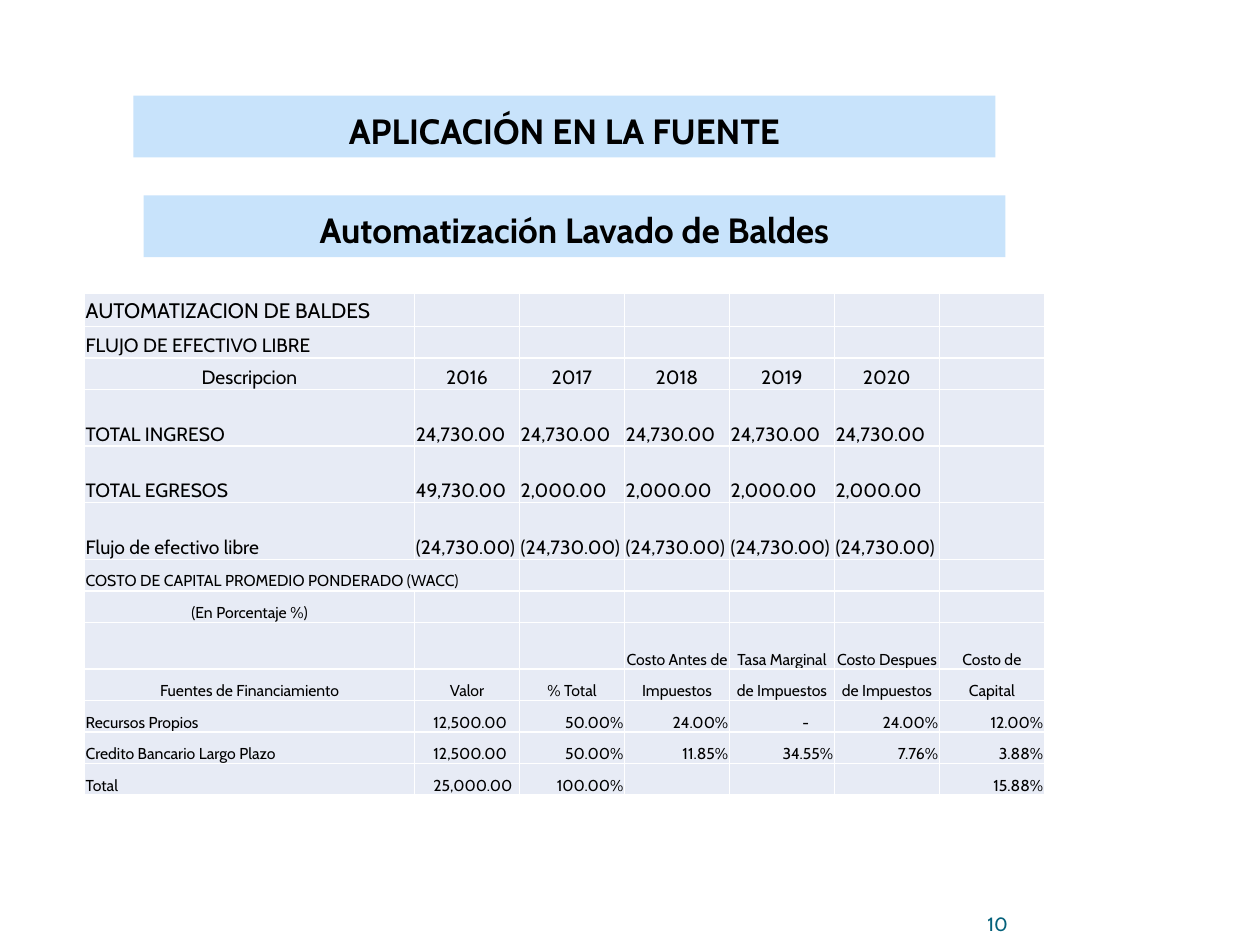
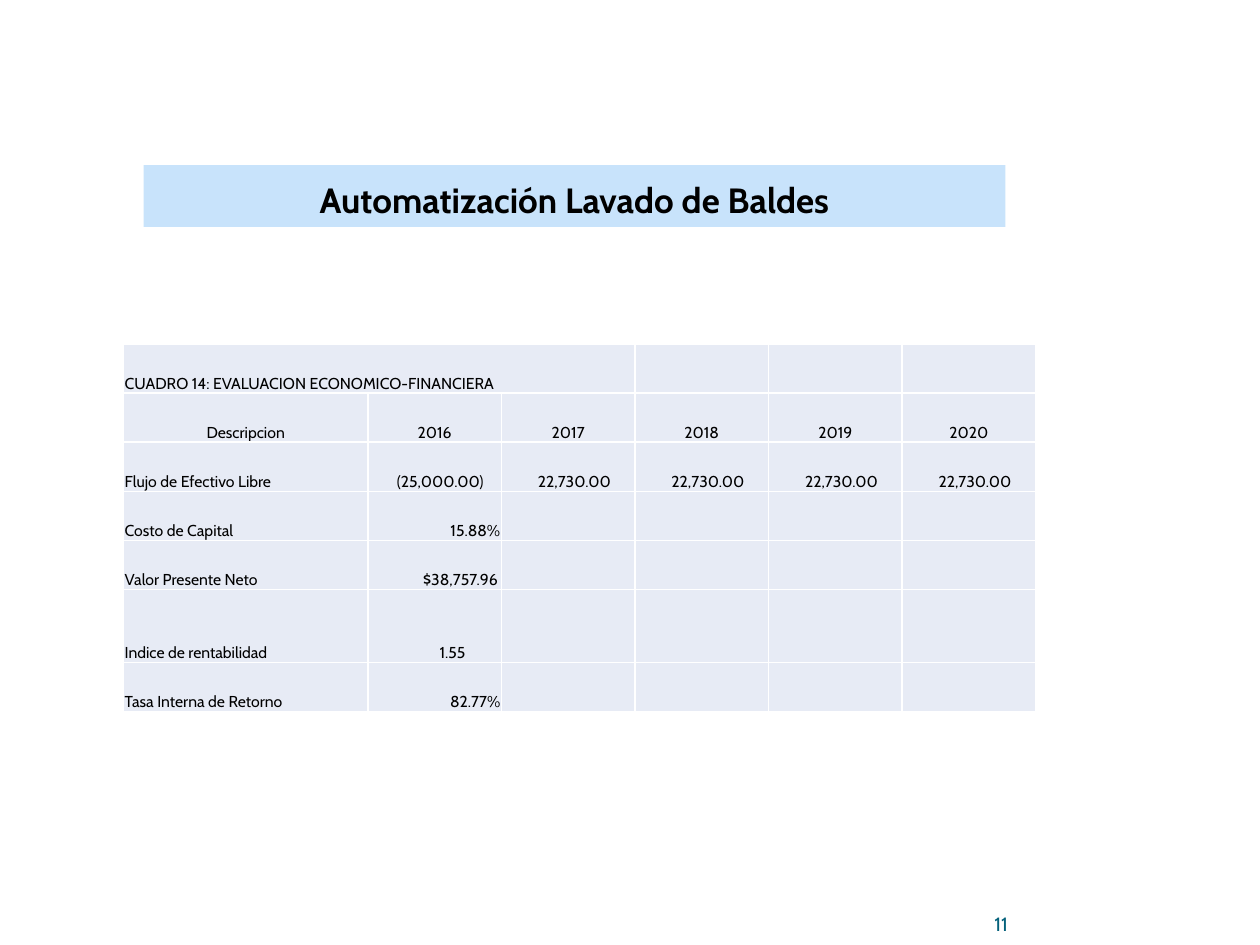
from dataclasses import dataclass

from lxml import etree
from pptx import Presentation, util as u
from pptx.dml.color import RGBColor
from pptx.enum import shapes, text
from pptx.oxml import ns

BAND_TITLE = "Automatización Lavado de Baldes"
YEARS = ["2016", "2017", "2018", "2019", "2020"]

FLOW_ROWS = [
    (0.26, "heading", "left", ["AUTOMATIZACION DE BALDES"]),
    (0.25, "body", "left", ["FLUJO DE EFECTIVO LIBRE"]),
    (0.25, "body", "center", ["Descripcion", *YEARS]),
    (0.45, "body", "left", ["TOTAL INGRESO"] + ["24,730.00"] * 5),
    (0.45, "body", "left", ["TOTAL EGRESOS", "49,730.00"] + ["2,000.00"] * 4),
    (0.45, "body", "left", ["Flujo de efectivo libre"] + ["(24,730.00)"] * 5),
    (0.25, "small", "left", ["COSTO DE CAPITAL PROMEDIO PONDERADO (WACC)"]),
    (0.25, "small", "center", ["(En Porcentaje %)"]),
    (0.37, "small", "center",
     ["", "", "", "Costo Antes de", "Tasa Marginal", "Costo Despues", "Costo de"]),
    (0.25, "small", "center",
     ["Fuentes de Financiamiento", "Valor", "% Total", "Impuestos",
      "de Impuestos", "de Impuestos", "Capital"]),
    (0.25, "small", "left",
     ["Recursos Propios", "12,500.00", "50.00%", "24.00%", "-", "24.00%", "12.00%"]),
    (0.25, "small", "left",
     ["Credito Bancario Largo Plazo", "12,500.00", "50.00%", "11.85%",
      "34.55%", "7.76%", "3.88%"]),
    (0.25, "small", "left",
     ["Total", "25,000.00", "100.00%", "", "", "", "15.88%"]),
]

EVALUATION_ROWS = [
    (0.39, "small", "left", ["CUADRO 14: EVALUACION ECONOMICO-FINANCIERA"]),
    (0.39, "small", "center", ["Descripcion", *YEARS]),
    (0.39, "small", "left",
     ["Flujo de Efectivo Libre", "(25,000.00)"] + ["22,730.00"] * 4),
    (0.39, "small", "left", ["Costo de Capital", "15.88%"]),
    (0.39, "small", "left", ["Valor Presente Neto", "$38,757.96"]),
    (0.58, "small", "left", ["Indice de rentabilidad", "1.55"]),
    (0.39, "small", "left", ["Tasa Interna de Retorno", "82.77%"]),
]

PAGES = [
    {
        "number": "10",
        "bands": [(1.14, 1.55, BAND_TITLE), (1.06, 0.76, "APLICACIÓN EN LA FUENTE")],
        "table": {
            "place": (0.67, 2.33, 7.62), "label_width": 2.62, "columns": 7,
            "rows": FLOW_ROWS, "merge": (6, 1),
            "indents": {"12,500.00": 0.15, "25,000.00": 0.15, "-": 0.58},
        },
    },
    {
        "number": "11",
        "bands": [(1.14, 1.31, BAND_TITLE)],
        "table": {
            "place": (0.98, 2.73, 7.24), "label_width": 1.94, "columns": 6,
            "rows": EVALUATION_ROWS, "merge": (0, 2),
            "indents": {"(25,000.00)": 0.23, "22,730.00": 0.29, "1.55": 0.57},
        },
    },
]


@dataclass(frozen=True)
class Theme:
    font: str = "Cabin"
    ink: str = "000000"
    number: str = "04617B"
    band: str = "C8E3FB"
    cell: str = "E7EBF5"
    rule: str = "FFFFFF"
    title: int = 20
    heading: int = 12
    body: int = 11
    small: int = 9


THEME = Theme()
ALIGN = {
    "left": text.PP_ALIGN.LEFT,
    "center": text.PP_ALIGN.CENTER,
    "right": text.PP_ALIGN.RIGHT,
}


def write(frame, words, size=THEME.body, align="left", color=THEME.ink, bold=False):
    para = frame.paragraphs[0]
    para.alignment = ALIGN[align]
    if not words:
        para._p.get_or_add_endParaRPr().set("sz", str(size * 100))
        return
    span = para.add_run()
    span.text = words
    span.font.name = THEME.font
    span.font.size = u.Pt(size)
    span.font.bold = bold
    span.font.color.rgb = RGBColor.from_string(color)


def paint(fill, color):
    fill.solid()
    fill.fore_color.rgb = RGBColor.from_string(color)


def add_band(page, left, top, words):
    band = page.shapes.add_shape(
        shapes.MSO_SHAPE.RECTANGLE,
        *map(u.Inches, (left, top, 6.84, 0.49)))
    band.shadow.inherit = False
    paint(band.fill, THEME.band)
    band.line.fill.background()
    band.text_frame.word_wrap = True
    band.text_frame.vertical_anchor = text.MSO_ANCHOR.BOTTOM
    write(band.text_frame, words, size=THEME.title, align="center", bold=True)


def add_number(page, words):
    box = page.shapes.add_textbox(*map(u.Inches, (7.36, 7.17, 0.64, 0.25)))
    frame = box.text_frame
    frame.word_wrap = True
    frame.vertical_anchor = text.MSO_ANCHOR.BOTTOM
    frame.margin_left = frame.margin_right = frame.margin_top = frame.margin_bottom = 0
    write(frame, words, align="right", color=THEME.number)


def add_borders(cell):
    properties = cell._tc.get_or_add_tcPr()
    for side in ("lnL", "lnR", "lnT", "lnB"):
        line = etree.SubElement(properties, ns.qn(f"a:{side}"), w=str(u.Pt(1)))
        fill = etree.SubElement(line, ns.qn("a:solidFill"))
        etree.SubElement(fill, ns.qn("a:srgbClr"), val=THEME.rule)


def fill_cell(cell, words, size, align, indent, anchor):
    add_borders(cell)
    paint(cell.fill, THEME.cell)
    cell.vertical_anchor = anchor
    cell.margin_left = u.Inches(indent)
    cell.margin_right = u.Inches(0.03 if words.startswith("$") else 0.01)
    cell.margin_top, cell.margin_bottom = u.Inches(0.01), 0
    if words.startswith("$") or words.endswith("%"):
        align = "right"
    write(cell.text_frame, words, size=size, align=align)


def add_grid(page, place, label_width, columns, rows, merge, indents):
    left, top, width = place
    height = sum(row[0] for row in rows)
    grid = page.shapes.add_table(
        len(rows), columns, *map(u.Inches, (left, top, width, height))).table
    grid.first_row = grid.horz_banding = False
    value_width = (width - label_width) / (columns - 1)
    for index, column in enumerate(grid.columns):
        column.width = u.Inches(value_width if index else label_width)
    for r, (row_height, level, align, values) in enumerate(rows):
        grid.rows[r].height = u.Inches(row_height)
        anchor = text.MSO_ANCHOR.MIDDLE if level == "heading" else text.MSO_ANCHOR.BOTTOM
        for c in range(columns):
            words = values[c] if c < len(values) else ""
            fill_cell(grid.cell(r, c), words, getattr(THEME, level), align,
                      indents.get(words, 0.01), anchor)
    merge_row, last_column = merge
    grid.cell(merge_row, 0).merge(grid.cell(merge_row, last_column))


def main():
    deck = Presentation()
    deck.slide_width, deck.slide_height = u.Inches(10), u.Inches(7.5)
    for content in PAGES:
        page = deck.slides.add_slide(deck.slide_layouts[6])
        for band in content["bands"]:
            add_band(page, *band)
        add_number(page, content["number"])
        add_grid(page, **content["table"])
    deck.save("out.pptx")


if __name__ == "__main__":
    main()
